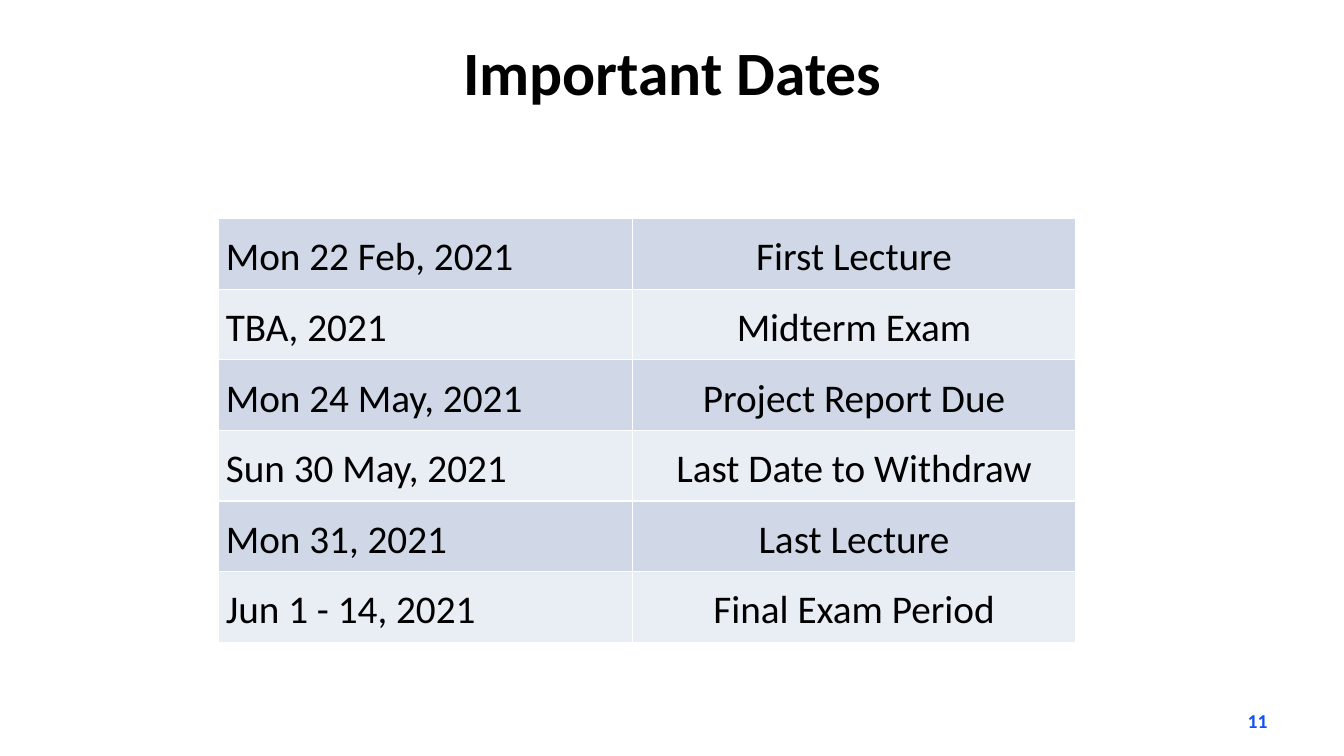
"""Build the Important Dates slide with its course calendar table."""
from pptx import Presentation
from pptx.dml.color import RGBColor
from pptx.enum.text import MSO_ANCHOR as Anchor, PP_ALIGN as Align
from pptx.oxml import parse_xml
from pptx.oxml.ns import nsdecls
from pptx.util import Inches, Pt


def color(value):
    return RGBColor.from_string(value)


def add_text(para, text, size, tint, bold, align):
    para.alignment = align
    span = para.add_run()
    span.text = text
    span.font.name = "Calibri"
    span.font.size = Pt(size)
    span.font.bold = bold
    span.font.color.rgb = color(tint)


deck = Presentation()
deck.slide_width = Inches(13.33)
deck.slide_height = Inches(7.5)
page = deck.slides.add_slide(deck.slide_layouts[5])

title = page.shapes.title
title.left, title.top = Inches(2.17), Inches(0.08)
title.width, title.height = Inches(9), Inches(1.25)
title.text_frame.vertical_anchor = Anchor.MIDDLE
add_text(title.text_frame.paragraphs[0], "Important Dates", 44, "000000", True, Align.CENTER)

dates = [
    ("Mon 22 Feb, 2021", "First Lecture"),
    ("TBA, 2021", "Midterm Exam"),
    ("Mon 24 May, 2021", "Project Report Due"),
    ("Sun 30 May, 2021", "Last Date to Withdraw"),
    ("Mon 31, 2021", "Last Lecture"),
    ("Jun 1 - 14, 2021", "Final Exam Period"),
]
band_fills = ["D0D8E8", "E9EDF4"]
column_aligns = [Align.LEFT, Align.CENTER]
table = page.shapes.add_table(
    len(dates), 2, Inches(2.17), Inches(2.17), Inches(8.5), Inches(4.2)
).table
table.first_row = False
table.horz_banding = False
table.columns[0].width = Inches(4.1)
table.columns[1].width = Inches(4.4)

for row, entry in enumerate(dates):
    table.rows[row].height = Inches(0.7)
    for column, text in enumerate(entry):
        cell = table.cell(row, column)
        cell.vertical_anchor = Anchor.MIDDLE
        cell.margin_left = cell.margin_right = Inches(0.07)
        cell.margin_top = cell.margin_bottom = 0
        for side in ("lnL", "lnR", "lnT", "lnB"):
            cell._tc.get_or_add_tcPr().append(parse_xml(
                f'<a:{side} {nsdecls("a")} w="12700"><a:solidFill>'
                f'<a:srgbClr val="FFFFFF"/></a:solidFill></a:{side}>'
            ))
        cell.fill.solid()
        cell.fill.fore_color.rgb = color(band_fills[row % 2])
        para = cell.text_frame.paragraphs[0]
        para.line_spacing = 1.15
        add_text(para, text, 28, "000000", False, column_aligns[column])

number_box = page.shapes.add_textbox(Inches(9.56), Inches(6.95), Inches(3.11), Inches(0.4))
number_box.text_frame.word_wrap = True
number_box.text_frame.vertical_anchor = Anchor.MIDDLE
add_text(number_box.text_frame.paragraphs[0], "11", 14, "114FFB", True, Align.RIGHT)

deck.save("out.pptx")
